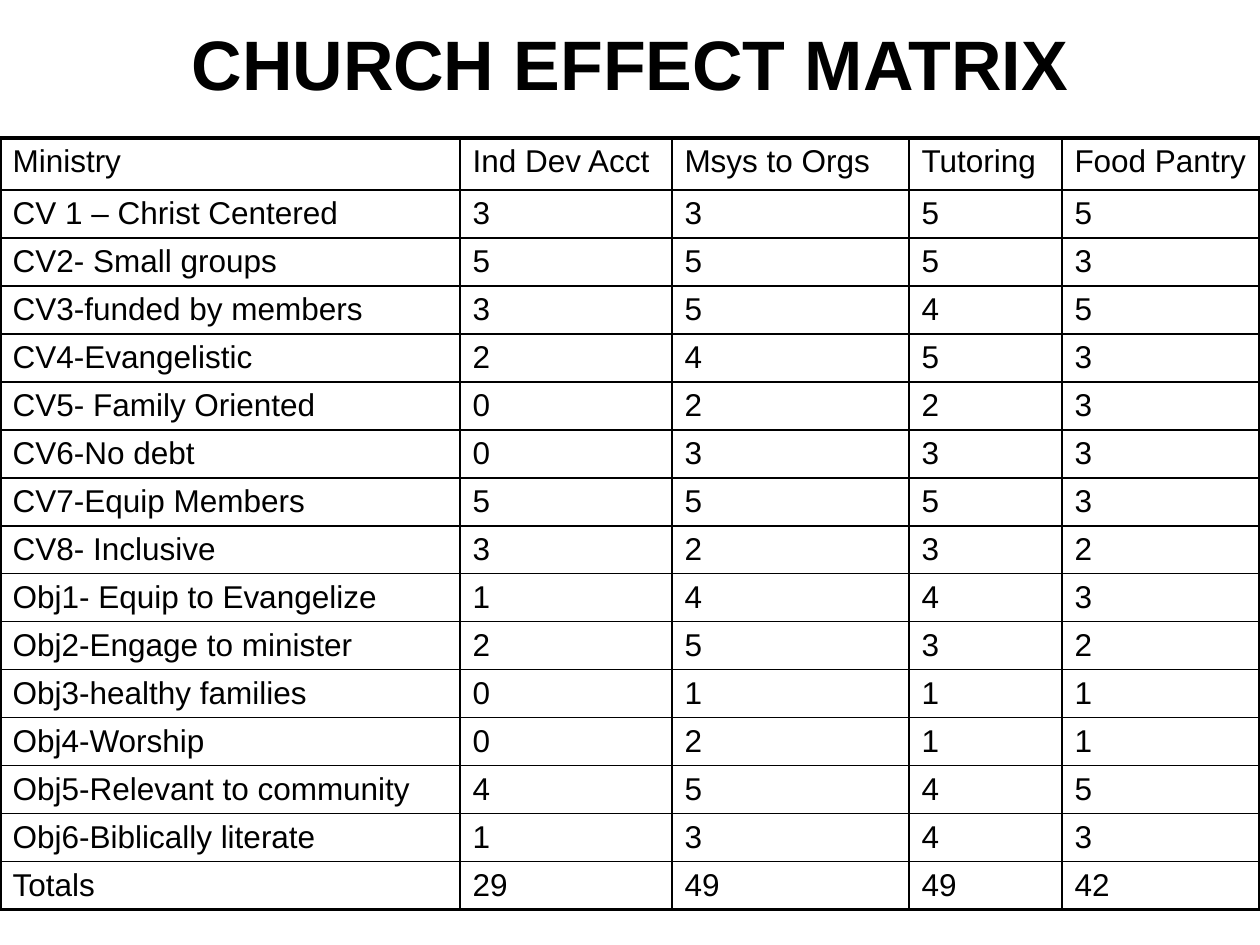
from lxml.etree import SubElement
from pptx import Presentation
from pptx.dml.color import RGBColor
from pptx.enum.text import MSO_ANCHOR as Anchor, PP_ALIGN as Align
from pptx.oxml.ns import qn
from pptx.util import Emu, Pt

PX_PER_INCH = 126
FONT = "Arial"
BLACK = "000000"
THIN, THICK = 1, 2.25

COLUMN_WIDTHS = [460, 212, 237, 153, 198]
TABLE_TOP = 138
HEADER_HEIGHT, ROW_HEIGHT = 52, 48
CELL_BOTTOM_MARGIN = 2

HEADER = ["Ministry", "Ind Dev Acct", "Msys to Orgs", "Tutoring", "Food Pantry"]
SCORES = [
    ("CV 1 – Christ Centered", 3, 3, 5, 5),
    ("CV2- Small groups", 5, 5, 5, 3),
    ("CV3-funded by members", 3, 5, 4, 5),
    ("CV4-Evangelistic", 2, 4, 5, 3),
    ("CV5- Family Oriented", 0, 2, 2, 3),
    ("CV6-No debt", 0, 3, 3, 3),
    ("CV7-Equip Members", 5, 5, 5, 3),
    ("CV8- Inclusive", 3, 2, 3, 2),
    ("Obj1- Equip to Evangelize", 1, 4, 4, 3),
    ("Obj2-Engage to minister", 2, 5, 3, 2),
    ("Obj3-healthy families", 0, 1, 1, 1),
    ("Obj4-Worship", 0, 2, 1, 1),
    ("Obj5-Relevant to community", 4, 5, 4, 5),
    ("Obj6-Biblically literate", 1, 3, 4, 3),
]


def px(length):
    return Emu(round(length * 914400 / PX_PER_INCH))


def color(value):
    return RGBColor.from_string(value)


def add_run(paragraph, text, size, bold=False):
    run = paragraph.add_run()
    run.text = text
    run.font.name = FONT
    run.font.size = Pt(size)
    run.font.bold = bold
    run.font.color.rgb = color(BLACK)


def add_title(slide, text):
    box = slide.shapes.add_textbox(px(32), px(21), px(1196), px(84))
    frame = box.text_frame
    frame.word_wrap = True
    frame.vertical_anchor = Anchor.MIDDLE
    paragraph = frame.paragraphs[0]
    paragraph.alignment = Align.CENTER
    add_run(paragraph, text, 40, bold=True)


def set_borders(cell, widths):
    properties = cell._tc.get_or_add_tcPr()
    for side, width in zip("LRTB", widths):
        line = SubElement(properties, qn(f"a:ln{side}"), w=str(Pt(width)))
        fill = SubElement(line, qn("a:solidFill"))
        SubElement(fill, qn("a:srgbClr"), val=BLACK)


def add_matrix(slide, rows):
    heights = [HEADER_HEIGHT] + [ROW_HEIGHT] * (len(rows) - 1)
    frame = slide.shapes.add_table(
        len(rows), len(COLUMN_WIDTHS), px(0), px(TABLE_TOP),
        px(sum(COLUMN_WIDTHS)), px(sum(heights)))
    table = frame.table
    table.first_row = table.horz_banding = False
    for column, width in zip(table.columns, COLUMN_WIDTHS):
        column.width = px(width)
    for row, height in zip(table.rows, heights):
        row.height = px(height)

    last_row, last_column = len(rows) - 1, len(COLUMN_WIDTHS) - 1
    for r, values in enumerate(rows):
        for c, value in enumerate(values):
            cell = table.cell(r, c)
            cell.margin_bottom = px(CELL_BOTTOM_MARGIN)
            add_run(cell.text_frame.paragraphs[0], str(value), 18)
            # Thick lines run only around the outside of the table
            outer = (c == 0, c == last_column, r == 0, r == last_row)
            set_borders(cell, [THICK if edge else THIN for edge in outer])
            cell.fill.background()


def main():
    presentation = Presentation()
    presentation.slide_width = px(1260)
    presentation.slide_height = px(945)
    slide = presentation.slides.add_slide(presentation.slide_layouts[6])

    add_title(slide, "CHURCH EFFECT MATRIX")

    # Score columns add up to the last row
    columns = list(zip(*SCORES))[1:]
    totals = ["Totals", *map(sum, columns)]
    add_matrix(slide, [HEADER, *SCORES, totals])

    presentation.save("out.pptx")


if __name__ == "__main__":
    main()
